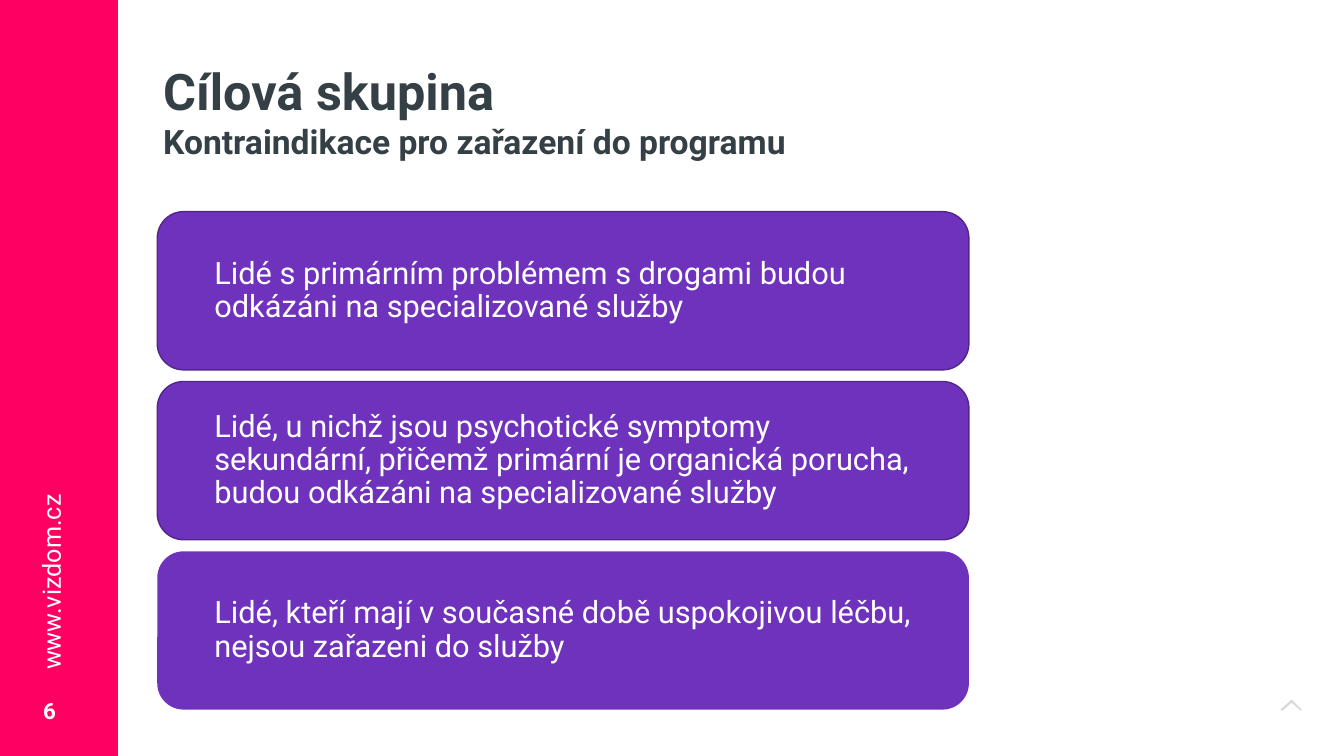
from dataclasses import dataclass

from lxml import etree
from pptx import Presentation
from pptx.dml.color import RGBColor
from pptx.enum.shapes import MSO_SHAPE
from pptx.enum.text import MSO_ANCHOR, PP_ALIGN
from pptx.oxml.ns import qn
from pptx.util import Inches, Pt

RECTANGLE = MSO_SHAPE.RECTANGLE
ROUNDED_RECTANGLE = MSO_SHAPE.ROUNDED_RECTANGLE
TOP, MIDDLE = MSO_ANCHOR.TOP, MSO_ANCHOR.MIDDLE
LEFT = PP_ALIGN.LEFT

FONT = "Roboto"
COLORS = {
    "sidebar": "FE0061",
    "card": "6E32BD",
    "card_line": "51258C",
    "dark": "344046",
    "white": "FFFFFF",
}
FORMATS = {
    "title": {"size": Pt(36), "bold": True},
    "subtitle": {"size": Pt(24), "bold": True},
    "card": {"size": Pt(22)},
    "address": {"size": Pt(18)},
    "number": {"size": Pt(16), "bold": True},
}

CARD_LEFT, CARD_TOP = 1.56, 2.1
CARD_WIDTH, CARD_HEIGHT = 8.05, 1.57
CARD_PITCH = 1.685
CARD_MARGINS = {"margin_left": Inches(0.49), "margin_right": Inches(0.48)}
CHEVRON = [(12.81, 6.94), (12.91, 7.04), (12.9, 7.05),
           (12.81, 6.97), (12.72, 7.05), (12.7, 7.04)]


@dataclass
class Card:
    text: str
    outlined: bool = True


@dataclass
class Label:
    lines: list[tuple[str, str]]
    box: tuple[float, float, float, float]
    color: str = "white"
    anchor: MSO_ANCHOR = TOP
    rotation: float = 0


CARDS = [
    Card("Lidé s primárním problémem s drogami budou odkázáni na "
         "specializované služby"),
    Card("Lidé, u nichž jsou psychotické symptomy sekundární, přičemž "
         "primární je organická porucha, budou odkázáni na "
         "specializované služby"),
    Card("Lidé, kteří mají v současné době uspokojivou léčbu, nejsou "
         "zařazeni do služby", outlined=False),
]
LABELS = [
    Label([("6", "number")], (0.33, 6.75, 0.5, 0.6), anchor=MIDDLE),
    Label([("www.vizdom.cz", "address")], (-0.68, 5.35, 2.38, 0.41),
          rotation=270),
    Label([("Cílová skupina", "title"),
           ("Kontraindikace pro zařazení do programu", "subtitle")],
          (1.52, 0.55, 10.67, 1.11), color="dark"),
]


def rgb(name: str) -> RGBColor:
    return RGBColor.from_string(COLORS[name])


def write(paragraph, text: str, style: str, color: str) -> None:
    paragraph.alignment = LEFT
    run = paragraph.add_run()
    run.text = text
    run.font.name = FONT
    run.font.color.rgb = rgb(color)
    for name, value in FORMATS[style].items():
        setattr(run.font, name, value)


def paint(shape, fill: str, line: str | None = None) -> None:
    shape.shadow.inherit = False
    shape.fill.solid()
    shape.fill.fore_color.rgb = rgb(fill)
    if line:
        shape.line.color.rgb = rgb(line)
        shape.line.width = Pt(1)
    else:
        shape.line.fill.background()


def add_chevron(slide) -> None:
    points = [(Inches(x), Inches(y)) for x, y in CHEVRON]
    builder = slide.shapes.build_freeform(*points[0])
    builder.add_line_segments(points[1:], close=True)
    chevron = builder.convert_to_shape()
    paint(chevron, "dark")
    color = chevron.fill._xPr.find(qn("a:solidFill"))[0]
    etree.SubElement(color, qn("a:alpha")).set("val", "20000")


def add_label(slide, label: Label) -> None:
    shape = slide.shapes.add_textbox(*map(Inches, label.box))
    shape.rotation = label.rotation
    frame = shape.text_frame
    frame.word_wrap = True
    frame.vertical_anchor = label.anchor
    for index, (text, style) in enumerate(label.lines):
        paragraph = frame.add_paragraph() if index else frame.paragraphs[0]
        write(paragraph, text, style, label.color)


def add_card(slide, card: Card, index: int) -> None:
    top = CARD_TOP + index * CARD_PITCH
    shape = slide.shapes.add_shape(
        ROUNDED_RECTANGLE, Inches(CARD_LEFT), Inches(top),
        Inches(CARD_WIDTH), Inches(CARD_HEIGHT))
    paint(shape, "card", "card_line" if card.outlined else None)
    frame = shape.text_frame
    frame.word_wrap = True
    frame.vertical_anchor = MIDDLE
    for name, value in CARD_MARGINS.items():
        setattr(frame, name, value)
    paragraph = frame.paragraphs[0]
    paragraph.line_spacing = 0.9
    write(paragraph, card.text, "card", "white")


def main() -> None:
    presentation = Presentation()
    presentation.slide_width = Inches(13.33)
    presentation.slide_height = Inches(7.5)
    slide = presentation.slides.add_slide(presentation.slide_layouts[6])

    # Sidebar and corner chevron
    add_chevron(slide)
    sidebar = slide.shapes.add_shape(
        RECTANGLE, 0, 0, Inches(1.17), presentation.slide_height)
    paint(sidebar, "sidebar")

    # Page number, web address and title
    for label in LABELS:
        add_label(slide, label)

    # Contraindication cards
    for index, card in enumerate(CARDS):
        add_card(slide, card, index)

    presentation.save("out.pptx")


if __name__ == "__main__":
    main()
